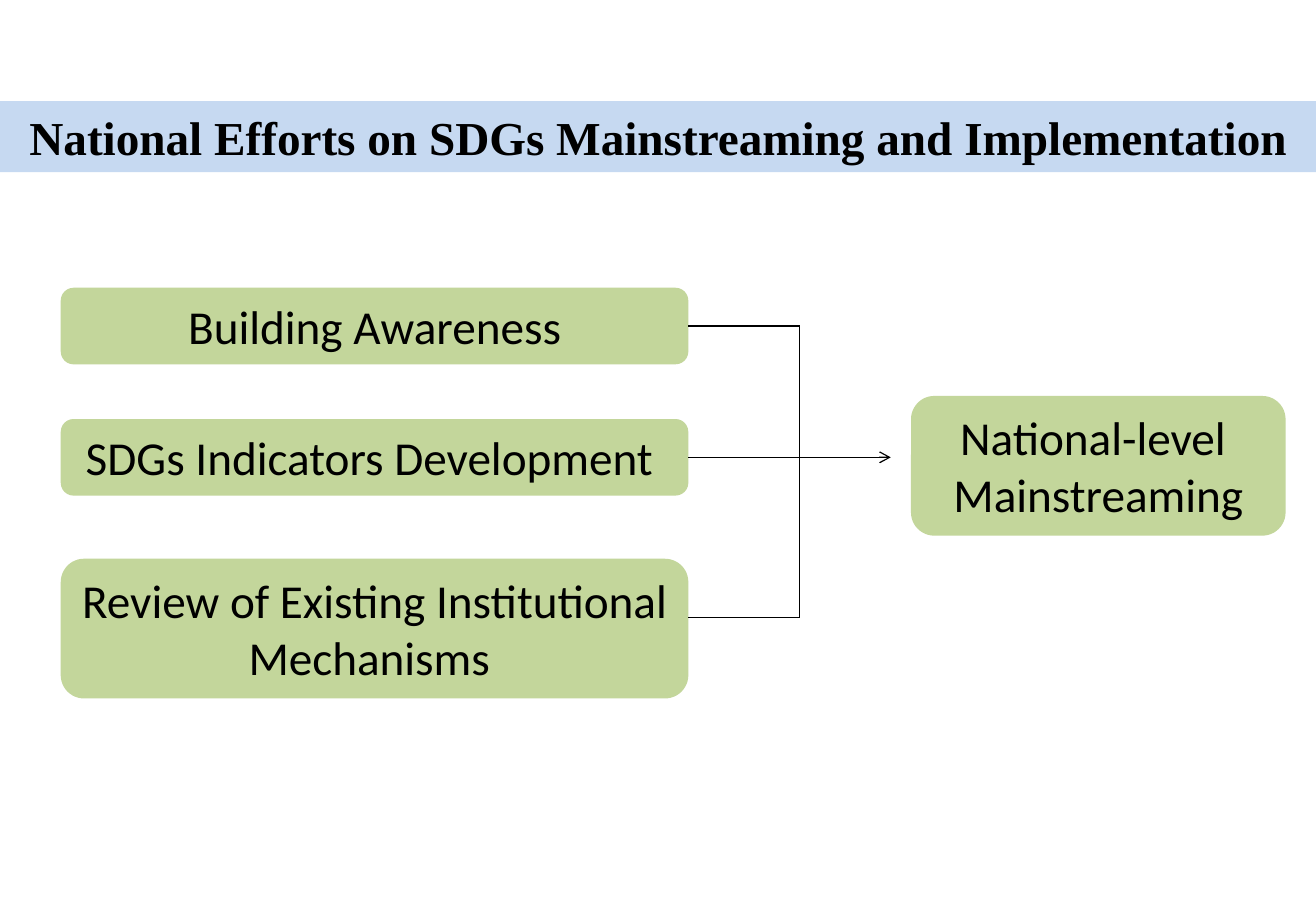
from lxml.etree import SubElement
from pptx import Presentation
from pptx.dml.color import RGBColor
from pptx.enum.shapes import MSO_CONNECTOR, MSO_SHAPE
from pptx.enum.text import MSO_ANCHOR, MSO_AUTO_SIZE, PP_ALIGN
from pptx.oxml.ns import qn
from pptx.util import Pt

BLACK = RGBColor(0x00, 0x00, 0x00)
BLUE = RGBColor(0xC6, 0xD9, 0xF1)
GREEN = RGBColor(0xC3, 0xD6, 0x9B)

EFFORT_LEFT, EFFORT_WIDTH = 36, 372
EFFORT_RIGHT = EFFORT_LEFT + EFFORT_WIDTH
TRUNK_X = 474
ARROW_END = 528
# Text, top, height and the height at which its line leaves the box
EFFORTS = [
    ("Building Awareness", 170.6, 45.4, 193.3),
    ("SDGs Indicators Development ", 248.4, 45.4, 271.1),
    ("Review of Existing Institutional Mechanisms ", 331.2, 82.8, 366),
]


def add_text(p, text, font, bold=False):
    p.alignment = PP_ALIGN.CENTER
    r = p.add_run()
    r.text = text
    r.font.name = font
    r.font.size = Pt(28)
    r.font.bold = bold
    r.font.color.rgb = BLACK


def set_title(s, text):
    title = s.shapes.title
    title.left, title.top, title.width, title.height = Pt(0), Pt(60), Pt(780), Pt(42)
    title.fill.solid()
    title.fill.fore_color.rgb = BLUE
    tf = title.text_frame
    tf.auto_size = MSO_AUTO_SIZE.NONE
    tf.vertical_anchor = MSO_ANCHOR.MIDDLE
    add_text(tf.paragraphs[0], text, "Times New Roman", bold=True)


def add_box(s, left, top, width, height, lines):
    sp = s.shapes.add_shape(MSO_SHAPE.ROUNDED_RECTANGLE,
                            Pt(left), Pt(top), Pt(width), Pt(height))
    sp.shadow.inherit = False
    sp.fill.solid()
    sp.fill.fore_color.rgb = GREEN
    sp.line.fill.background()
    tf = sp.text_frame
    tf.word_wrap = True
    tf.auto_size = MSO_AUTO_SIZE.SHAPE_TO_FIT_TEXT
    tf.vertical_anchor = MSO_ANCHOR.TOP
    for i, line in enumerate(lines):
        p = tf.add_paragraph() if i else tf.paragraphs[0]
        add_text(p, line, "Calibri")
    return sp


def add_line(s, x1, y1, x2, y2, arrow=False):
    line = s.shapes.add_connector(MSO_CONNECTOR.STRAIGHT,
                                  Pt(x1), Pt(y1), Pt(x2), Pt(y2))
    line.line.color.rgb = BLACK
    line.line.width = Pt(0.75)
    if arrow:
        SubElement(line.line._get_or_add_ln(), qn("a:tailEnd"), type="arrow")
    SubElement(line._element.spPr, qn("a:effectLst"))
    return line


def main():
    prs = Presentation()
    prs.slide_width, prs.slide_height = Pt(780), Pt(540)
    s = prs.slides.add_slide(prs.slide_layouts[5])
    set_title(s, "National Efforts on SDGs Mainstreaming and Implementation")

    for text, top, height, line_y in EFFORTS:
        box = add_box(s, EFFORT_LEFT, top, EFFORT_WIDTH, height, [text])
        line = add_line(s, EFFORT_RIGHT, line_y, TRUNK_X, line_y)
        if abs(top + height / 2 - line_y) < 0.1:
            line.begin_connect(box, 3)

    first_y, arrow_y, last_y = [effort[-1] for effort in EFFORTS]
    add_line(s, TRUNK_X, first_y, TRUNK_X, last_y)
    add_line(s, TRUNK_X, arrow_y, ARROW_END, arrow_y, arrow=True)
    add_box(s, 540, 234.7, 222, 82.8, ["National-level ", "Mainstreaming"])

    prs.save("out.pptx")


if __name__ == "__main__":
    main()
